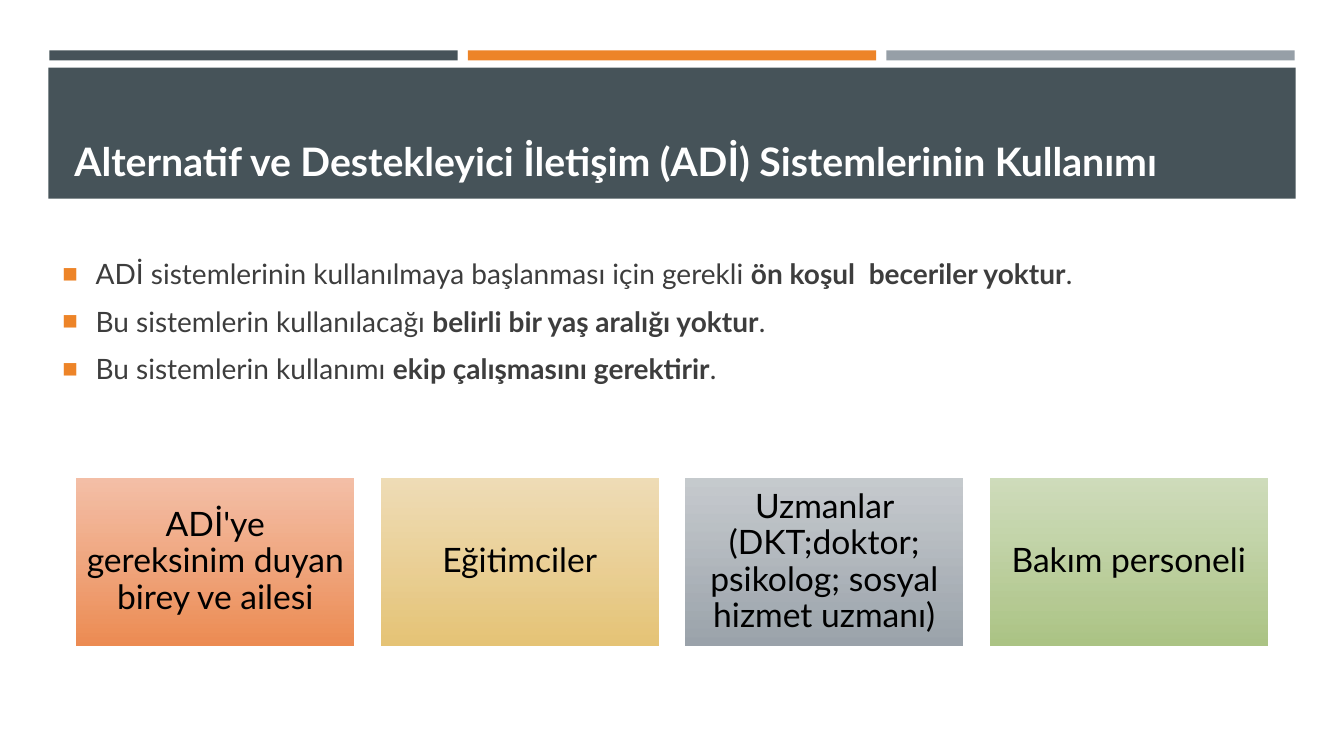
import pptx
import pptx.util
import pptx.dml.color
import pptx.enum.shapes
import pptx.enum.text
import pptx.oxml
import pptx.oxml.ns
from lxml import etree

RGB = pptx.dml.color.RGBColor
Inches, Pt = pptx.util.Inches, pptx.util.Pt
ALIGN, ANCHOR = pptx.enum.text.PP_ALIGN, pptx.enum.text.MSO_ANCHOR
qn = pptx.oxml.ns.qn

SLATE = RGB(0x46, 0x53, 0x59)
ORANGE = RGB(0xED, 0x84, 0x28)
GREY = RGB(0x96, 0x9F, 0xA7)
WHITE = RGB(0xFF, 0xFF, 0xFF)
INK = RGB(0x3D, 0x3D, 0x3D)
BLACK = RGB(0, 0, 0)
FONT = "Lato"

TITLE = "Alternatif ve Destekleyici İletişim (ADİ) Sistemlerinin Kullanımı"
POINTS = [
    ("ADİ sistemlerinin kullanılmaya başlanması için gerekli ",
     "ön koşul  beceriler yoktur"),
    ("Bu sistemlerin kullanılacağı ", "belirli bir yaş aralığı yoktur"),
    ("Bu sistemlerin kullanımı ", "ekip çalışmasını gerektirir"),
]
# Card text, top colour, bottom colour
TEAM = [
    ("ADİ'ye gereksinim duyan birey ve ailesi",
     RGB(0xF3, 0xB8, 0x9D), RGB(0xED, 0x8C, 0x53)),
    ("Eğitimciler", RGB(0xEE, 0xD9, 0xAE), RGB(0xE6, 0xC4, 0x76)),
    ("Uzmanlar (DKT;doktor; psikolog; sosyal hizmet uzmanı)",
     RGB(0xC0, 0xC5, 0xC9), RGB(0x9B, 0xA3, 0xAB)),
    ("Bakım personeli", RGB(0xCA, 0xD9, 0xB4), RGB(0xAC, 0xC4, 0x85)),
]


def split(box, count, gap):
    """Cut a box into equal columns."""
    left, top, width, height = box
    col = (width - gap * (count - 1)) / count
    return [(left + i * (col + gap), top, col, height) for i in range(count)]


def add_rect(slide, box, color=None):
    rect = slide.shapes.add_shape(
        pptx.enum.shapes.MSO_SHAPE.RECTANGLE, *map(Inches, box))
    rect.shadow.inherit = False
    rect.line.fill.background()
    if color is not None:
        rect.fill.solid()
        rect.fill.fore_color.rgb = color
    return rect


def add_text(slide, box, anchor):
    frame = slide.shapes.add_textbox(*map(Inches, box)).text_frame
    frame.word_wrap = True
    frame.vertical_anchor = anchor
    return frame


def add_run(para, text, size, color, bold=False):
    run = para.add_run()
    run.text = text
    run.font.name, run.font.size = FONT, Pt(size)
    run.font.bold = bold
    run.font.color.rgb = color


def add_bullet(para):
    props = para._p.get_or_add_pPr()
    props.set("marL", str(Inches(0.33)))
    props.set("indent", str(-Inches(0.33)))
    tint = etree.SubElement(props, qn("a:buClr"))
    etree.SubElement(tint, qn("a:srgbClr"), val=str(ORANGE))
    etree.SubElement(props, qn("a:buSzPct"), val="92000")
    etree.SubElement(props, qn("a:buFont"), typeface="Arial")
    etree.SubElement(props, qn("a:buChar"), char="■")


def add_bars(slide, box):
    for cell, color in zip(split(box, 3, 0.1), (SLATE, ORANGE, GREY)):
        add_rect(slide, cell, color)


def add_title(slide, box):
    add_rect(slide, box, SLATE)
    left, top, width, height = box
    inner = (left + 0.16, top + 0.1, width - 0.31, height - 0.19)
    frame = add_text(slide, inner, ANCHOR.BOTTOM)
    add_run(frame.paragraphs[0], TITLE, 28, WHITE, True)


def add_points(slide, box):
    frame = add_text(slide, box, ANCHOR.MIDDLE)
    for i, (lead, stress) in enumerate(POINTS):
        para = frame.add_paragraph() if i else frame.paragraphs[0]
        para.space_before, para.space_after = Pt(4), Pt(6)
        add_bullet(para)
        add_run(para, lead, 20, INK)
        add_run(para, stress, 20, INK, True)
        add_run(para, ".", 20, INK)


def add_card(slide, box, text, light, deep):
    card = add_rect(slide, box)
    card.fill.gradient()
    card.fill.gradient_angle = 270
    for stop, color in zip(card.fill.gradient_stops, (light, deep)):
        stop.color.rgb = color
    # The top colour is slightly see-through
    first = next(card._element.iter(qn("a:srgbClr")))
    etree.SubElement(first, qn("a:alpha"), val="90000")

    frame = card.text_frame
    frame.word_wrap = True
    frame.vertical_anchor = ANCHOR.MIDDLE
    frame.margin_left = frame.margin_right = Inches(0.1)
    frame.margin_top = frame.margin_bottom = Inches(0.1)
    para = frame.paragraphs[0]
    para.alignment, para.line_spacing = ALIGN.CENTER, 0.9
    add_run(para, text, 24, BLACK)


def add_team(slide, box):
    for cell, member in zip(split(box, len(TEAM), 0.27), TEAM):
        add_card(slide, cell, *member)


def main():
    deck = pptx.Presentation()
    deck.slide_width, deck.slide_height = Inches(13.33), Inches(7.5)
    slide = deck.slides.add_slide(deck.slide_layouts[6])
    add_bars(slide, (0.49, 0.5, 12.35, 0.1))
    add_title(slide, (0.48, 0.67, 12.37, 1.3))
    add_points(slide, (0.52, 2.13, 12.06, 2.11))
    add_team(slide, (0.76, 4.75, 11.81, 1.65))
    deck.save("out.pptx")


if __name__ == "__main__":
    main()
